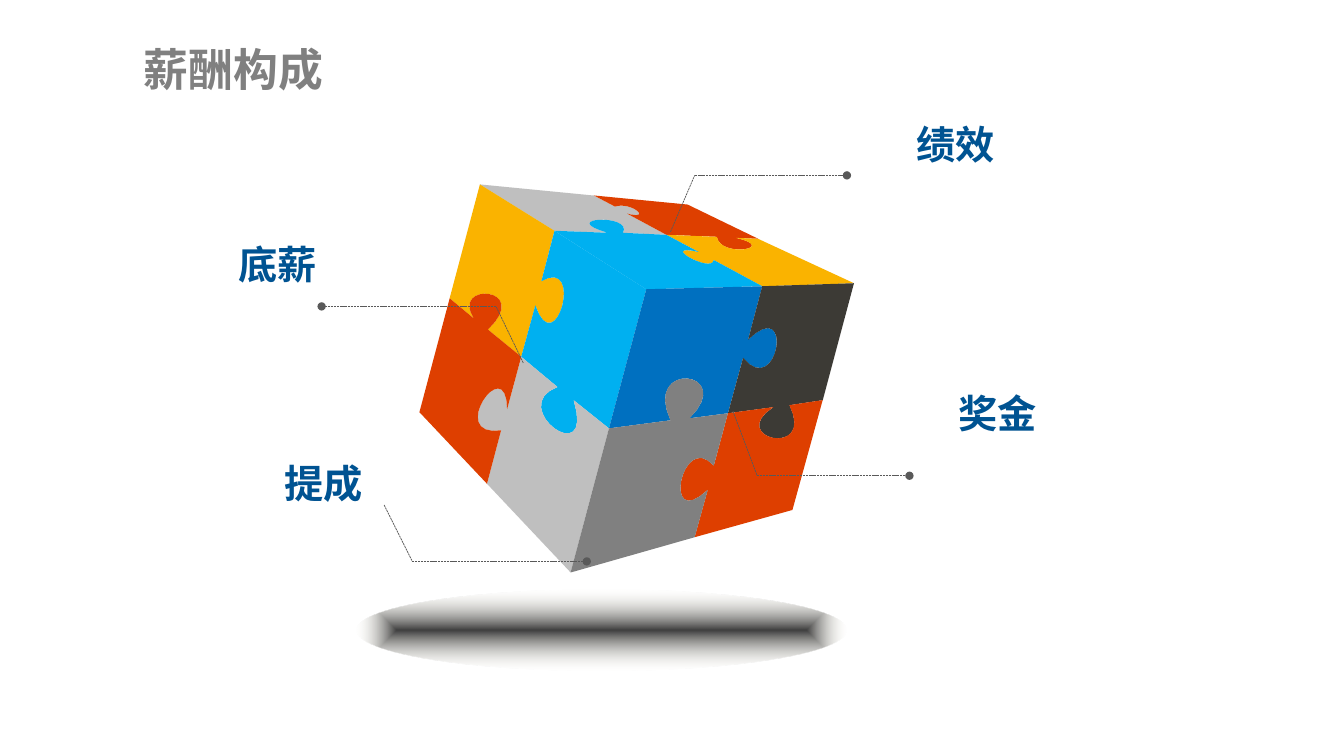
from math import cos, radians, sin

from lxml import etree
from pptx import Presentation
from pptx.dml.color import RGBColor
from pptx.enum.dml import MSO_LINE
from pptx.enum.shapes import MSO_CONNECTOR, MSO_SHAPE
from pptx.enum.text import PP_ALIGN
from pptx.oxml import parse_xml
from pptx.oxml.ns import nsdecls, qn
from pptx.util import Inches, Pt

DASHED = MSO_LINE.SQUARE_DOT
STRAIGHT = MSO_CONNECTOR.STRAIGHT
OVAL = MSO_SHAPE.OVAL
LEFT, RIGHT = PP_ALIGN.LEFT, PP_ALIGN.RIGHT

LABEL_BLUE = RGBColor(0x00, 0x53, 0x92)
LINE_GRAY = RGBColor(0x59, 0x59, 0x59)
GRAY = RGBColor(0x80, 0x80, 0x80)
SILVER = RGBColor(0xBF, 0xBF, 0xBF)
YELLOW = RGBColor(0xFA, 0xB3, 0x00)
RED = RGBColor(0xDE, 0x3F, 0x00)
SKY = RGBColor(0x00, 0xB0, 0xF0)
PALE_SKY = RGBColor(0x63, 0xCF, 0xF6)
BLUE = RGBColor(0x00, 0x70, 0xC0)
CHARCOAL = RGBColor(0x3C, 0x3A, 0x35)

CUBE_TILT = 15
CURVE_STEPS = 16

# Cube corners by letter, and the middle of each edge by its two letters
CUBE = {
    "A": (4.76, 1.83), "B": (8.47, 2.81), "C": (6.41, 2.87), "D": (6.82, 2.03),
    "E": (4.16, 4.09), "F": (5.66, 5.68), "G": (7.86, 5.06),
    "AC": (5.5, 2.29), "AD": (5.89, 1.94), "DB": (7.52, 2.37), "CB": (7.56, 2.84),
    "AE": (4.46, 2.96), "CF": (6.04, 4.25), "EF": (4.83, 4.8),
    "BG": (8.16, 3.97), "FG": (6.89, 5.33),
}

# Each face: its centre, then per corner the piece colour, the edge that follows,
# and the tab on the seam from that edge to the centre (foot, two shoulders, foot).
FACES = [
    ((6.61, 2.33), [
        ("A", SILVER, "AD", [(6.1, 2.05), (6.26, 2.06), (6.34, 2.12), (6.22, 2.12)]),
        ("D", RED, "DB", [(7.3, 2.36), (7.45, 2.45), (7.27, 2.47), (7.11, 2.35)]),
        ("B", YELLOW, "CB", [(7.08, 2.58), (6.94, 2.6), (6.78, 2.51), (6.93, 2.5)]),
        ("C", SKY, "AC", [(6.03, 2.31), (5.86, 2.2), (6.07, 2.19), (6.18, 2.31)]),
    ]),
    ((5.17, 3.54), [
        ("A", YELLOW, "AC", [(5.37, 2.79), (5.59, 2.87), (5.51, 3.17), (5.31, 3.03)]),
        ("C", SKY, "CF", [(5.69, 3.97), (5.63, 4.3), (5.39, 4.12), (5.53, 3.84)]),
        ("F", SILVER, "EF", [(4.97, 4.27), (4.74, 4.12), (4.89, 3.87), (5.03, 4.06)]),
        ("E", RED, "AE", [(4.7, 3.16), (4.73, 2.93), (4.95, 2.97), (4.84, 3.27)]),
    ]),
    ((7.22, 4.1), [
        ("C", BLUE, "CB", [(7.42, 3.37), (7.69, 3.31), (7.64, 3.59), (7.37, 3.55)]),
        ("B", CHARCOAL, "BG", [(7.83, 4.02), (7.8, 4.33), (7.56, 4.29), (7.67, 4.04)]),
        ("G", RED, "FG", [(7.02, 4.86), (6.76, 4.91), (6.82, 4.62), (7.08, 4.62)]),
        ("F", GRAY, "CF", [(6.65, 4.17), (6.68, 3.79), (6.94, 3.81), (6.84, 4.15)]),
    ]),
]

# Label, its box corner and alignment, then the three points of its leader line
CALLOUTS = [
    ("底薪", 1.33, 2.38, RIGHT, [(5.19, 3.6), (4.92, 3.04), (3.19, 3.04)]),
    ("绩效", 9.09, 1.19, LEFT, [(6.65, 2.3), (6.89, 1.74), (8.4, 1.74)]),
    ("奖金", 9.51, 3.86, LEFT, [(7.27, 4.08), (7.51, 4.72), (9.02, 4.72)]),
    ("提成", 1.79, 4.56, RIGHT, [(3.81, 5.01), (4.09, 5.57), (5.82, 5.57)]),
]


def turn(x, y, degrees):
    """Rotate a point clockwise on the slide about its top left corner."""
    angle = radians(degrees)
    return x * cos(angle) - y * sin(angle), x * sin(angle) + y * cos(angle)


def trace_tab(tab):
    """Return points on the cubic that passes through the four points of a tab."""
    points = []
    for step in range(CURVE_STEPS + 1):
        t = 3 * step / CURVE_STEPS
        weights = (-(t - 1) * (t - 2) * (t - 3) / 6, t * (t - 2) * (t - 3) / 2,
                   -t * (t - 1) * (t - 3) / 2, t * (t - 1) * (t - 2) / 6)
        points.append(tuple(sum(w * v for w, v in zip(weights, axis)) for axis in zip(*tab)))
    return points


deck = Presentation()
deck.slide_width, deck.slide_height = Inches(13.33), Inches(7.5)
page = deck.slides.add_slide(deck.slide_layouts[6])
shapes = page.shapes

# Title
title = shapes.add_textbox(Inches(1.33), Inches(0.1), Inches(2.5), Inches(0.91))
title.text_frame.word_wrap = True
para = title.text_frame.paragraphs[0]
para.text = "薪酬构成"
para.line_spacing = 1.5
para.font.name, para.font.size, para.font.bold = "Noto Sans CJK SC", Pt(32), True
para.font.color.rgb = GRAY

# Outlines of the puzzle cube: two slivers of light on an edge, then the pieces
outlines = [(PALE_SKY, [CUBE[start], CUBE[end], CUBE[start]])
            for start, end in (("A", "AC"), ("AC", "C"))]
for center, quarters in FACES:
    seams = [[CUBE[edge], *trace_tab(tab), center] for _, _, edge, tab in quarters]
    for index, (corner, color, _, _) in enumerate(quarters):
        outlines.append((color, [CUBE[corner], *seams[index], *reversed(seams[index - 1])]))

# Each outline is drawn upright, then tilted about its own centre
for color, outline in outlines:
    upright = [turn(Inches(x), Inches(y), -CUBE_TILT) for x, y in outline]
    builder = shapes.build_freeform(*upright[0])
    builder.add_line_segments(upright[1:], close=True)
    piece = builder.convert_to_shape()
    center_x, center_y = turn(piece.left + piece.width / 2, piece.top + piece.height / 2, CUBE_TILT)
    piece.left = round(center_x - piece.width / 2)
    piece.top = round(center_y - piece.height / 2)
    piece.rotation = CUBE_TILT
    piece.shadow.inherit = False
    piece.fill.solid()
    piece.fill.fore_color.rgb = color
    piece.line.fill.background()

# Floor shadow, fading out from its middle
floor = shapes.add_shape(OVAL, Inches(3.54), Inches(5.85), Inches(4.86), Inches(0.8))
floor.shadow.inherit = False
floor.line.fill.background()
floor.fill.background()
fade = parse_xml(
    f'<a:gradFill {nsdecls("a")} rotWithShape="1"><a:gsLst>'
    '<a:gs pos="0"><a:srgbClr val="404040"/></a:gs>'
    '<a:gs pos="100000"><a:srgbClr val="EEECE1"><a:alpha val="0"/></a:srgbClr></a:gs>'
    '</a:gsLst><a:path path="shape">'
    '<a:fillToRect l="50000" t="50000" r="50000" b="50000"/></a:path></a:gradFill>')
properties = floor.element.spPr
properties.replace(properties.find(qn("a:noFill")), fade)

# Callouts
for label, left, top, alignment, points in CALLOUTS:
    for start, end in zip(points, points[1:]):
        leader = shapes.add_connector(STRAIGHT, *map(Inches, start + end))
        leader.line.width = Pt(0.5)
        leader.line.color.rgb = LINE_GRAY
        leader.line.dash_style = DASHED
        etree.SubElement(leader.element.spPr, qn("a:effectLst"))
    outline_xml = leader.element.spPr.find(qn("a:ln"))
    etree.SubElement(outline_xml, qn("a:tailEnd"), type="oval")

    box = shapes.add_textbox(Inches(left), Inches(top), Inches(1.81), Inches(0.47))
    frame = box.text_frame
    frame.word_wrap = True
    frame.margin_left = frame.margin_top = frame.margin_right = frame.margin_bottom = 0
    para = frame.paragraphs[0]
    para.text = label
    para.alignment = alignment
    para.font.name, para.font.size, para.font.bold = "Arial", Pt(28), True
    para.font.color.rgb = LABEL_BLUE

deck.save("out.pptx")
